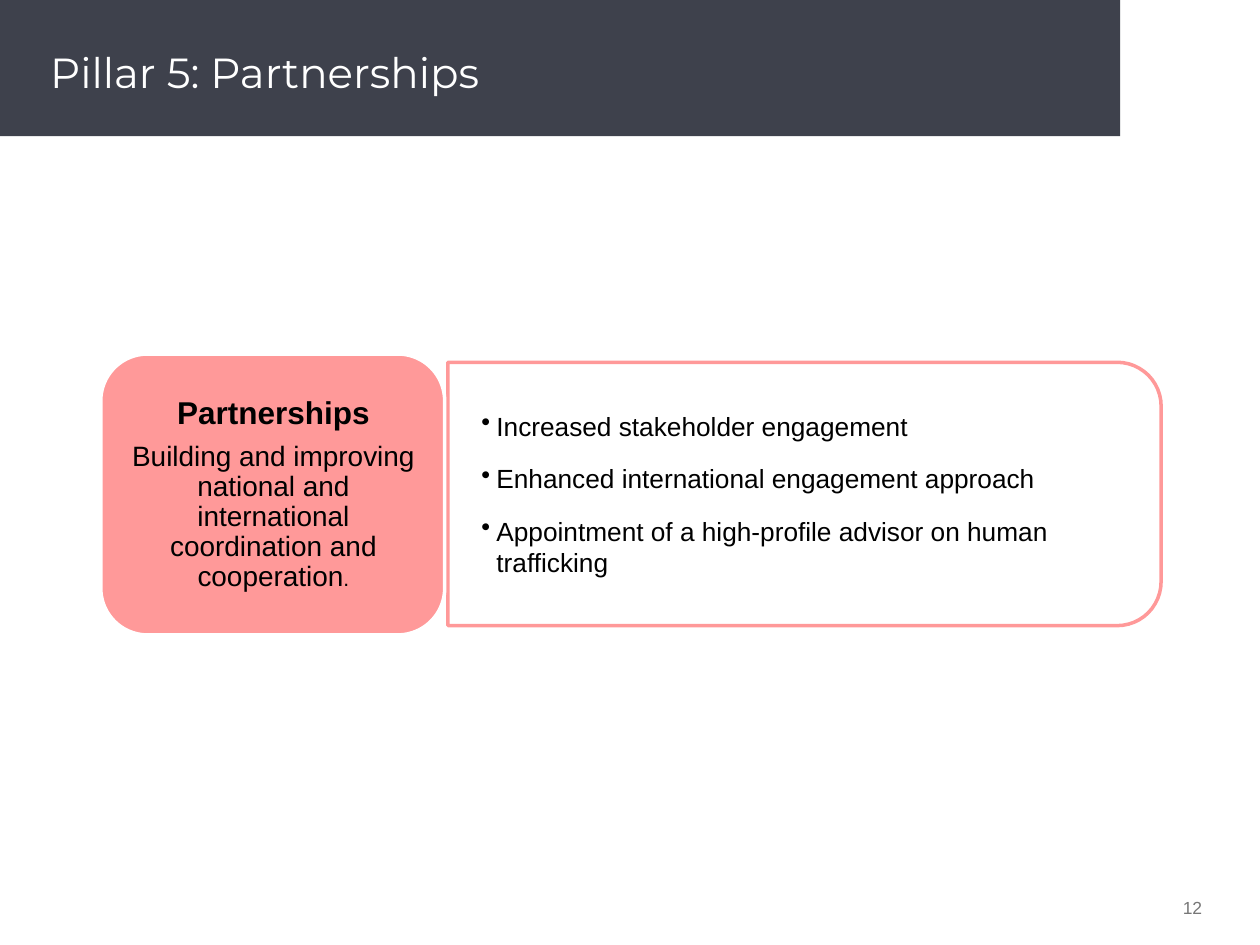
from lxml.etree import SubElement, fromstring
from pptx import Presentation
from pptx.dml.color import RGBColor
from pptx.enum.shapes import MSO_SHAPE
from pptx.enum.text import MSO_ANCHOR, PP_ALIGN
from pptx.oxml.ns import nsdecls, qn
from pptx.util import Inches, Pt

SLATE, PINK, WHITE, BLACK, GREY = "3E414C", "FF9999", "FFFFFF", "000000", "777777"


def color(hex_value):
    return RGBColor.from_string(hex_value)


class PillarSlide:
    """Places elements on a grid of 100 columns by 75 rows."""

    CELL = Inches(0.1)
    FONT = "Arial"

    def __init__(self, deck):
        deck.slide_width, deck.slide_height = 100 * self.CELL, 75 * self.CELL
        self.slide = deck.slides.add_slide(deck.slide_layouts[6])

    def place(self, area):
        return [round(cells * self.CELL) for cells in area]

    def block(self, preset, area, fill=None, line=None, rotation=0):
        block = self.slide.shapes.add_shape(preset, *self.place(area))
        block.shadow.inherit = False
        block.rotation = rotation
        if fill:
            block.fill.solid()
            block.fill.fore_color.rgb = color(fill)
        else:
            block.fill.background()
        if line:
            block.line.color.rgb = color(line)
            block.line.width = Pt(2)
        else:
            block.line.fill.background()

    def text(self, area, paragraphs, insets=(1, 0.5), anchor=MSO_ANCHOR.MIDDLE,
             bullet=False, shadow=False, **layout):
        """Each paragraph is a list of (words, font values) runs."""
        frame = self.slide.shapes.add_textbox(*self.place(area)).text_frame
        across, down = self.place(insets)
        settings = {"word_wrap": True, "vertical_anchor": anchor,
                    "margin_left": across, "margin_right": across,
                    "margin_top": down, "margin_bottom": down}
        for name, value in settings.items():
            setattr(frame, name, value)
        for index, runs in enumerate(paragraphs):
            paragraph = frame.add_paragraph() if index else frame.paragraphs[0]
            for name, value in layout.items():
                setattr(paragraph, name, value)
            if bullet:
                self.bullet(paragraph)
            for words, values in runs:
                self.run(paragraph, words, values, shadow)

    def bullet(self, paragraph):
        properties = paragraph._p.get_or_add_pPr()
        indent = Inches(0.12)
        properties.set("marL", str(indent))
        properties.set("indent", str(-indent))
        SubElement(properties, qn("a:buChar")).set("char", "•")

    def run(self, paragraph, words, values, shadow):
        run = paragraph.add_run()
        run.text = words
        style = {"name": self.FONT, "bold": False, "color": BLACK} | values
        run.font.color.rgb = color(style.pop("color"))
        for name, value in style.items():
            setattr(run.font, name, value)
        if shadow:
            run._r.rPr.find(qn("a:solidFill")).addnext(fromstring(
                f'<a:effectLst {nsdecls("a")}><a:outerShdw blurRad="38100" '
                'dist="38100" dir="2700000"><a:srgbClr val="000000">'
                '<a:alpha val="43000"/></a:srgbClr></a:outerShdw></a:effectLst>'))


def main():
    deck = Presentation()
    page = PillarSlide(deck)

    page.block(MSO_SHAPE.RECTANGLE, (0, 0, 88.9, 10.8), fill=SLATE)
    title = {"size": Pt(24), "name": "Montserrat", "color": WHITE}
    page.text((3, 1.1, 90, 9.2), [[("Pillar 5: Partnerships", title)]], shadow=True)
    page.text((73.1, 70.7, 23.3, 2.8), [[("12", {"size": Pt(10), "color": GREY})]],
              anchor=MSO_ANCHOR.TOP, alignment=PP_ALIGN.RIGHT)

    page.block(MSO_SHAPE.ROUND_2_SAME_RECTANGLE, (53.4, 10.9, 20.9, 56.6),
               line=PINK, rotation=90)
    actions = ["Increased stakeholder engagement",
               "Enhanced international engagement approach",
               "Appointment of a high-profile advisor on human trafficking"]
    page.text((35.5, 29.8, 55.6, 18.8),
              [[(action, {"size": Pt(15)})] for action in actions],
              insets=(2.7, 1.4), bullet=True, space_after=Pt(12))

    page.block(MSO_SHAPE.ROUNDED_RECTANGLE, (8, 28.1, 27.3, 22.3),
               fill=PINK, line=WHITE)
    goal = "Building and improving national and international coordination and cooperation"
    page.text((9.1, 29.2, 25.2, 20.2),
              [[("Partnerships", {"size": Pt(18), "bold": True})],
               [(goal, {"size": Pt(16)}), (".", {"size": Pt(12)})]],
              insets=(0.7, 0.4), alignment=PP_ALIGN.CENTER,
              line_spacing=0.9, space_after=Pt(6))

    deck.save("out.pptx")


if __name__ == "__main__":
    main()
